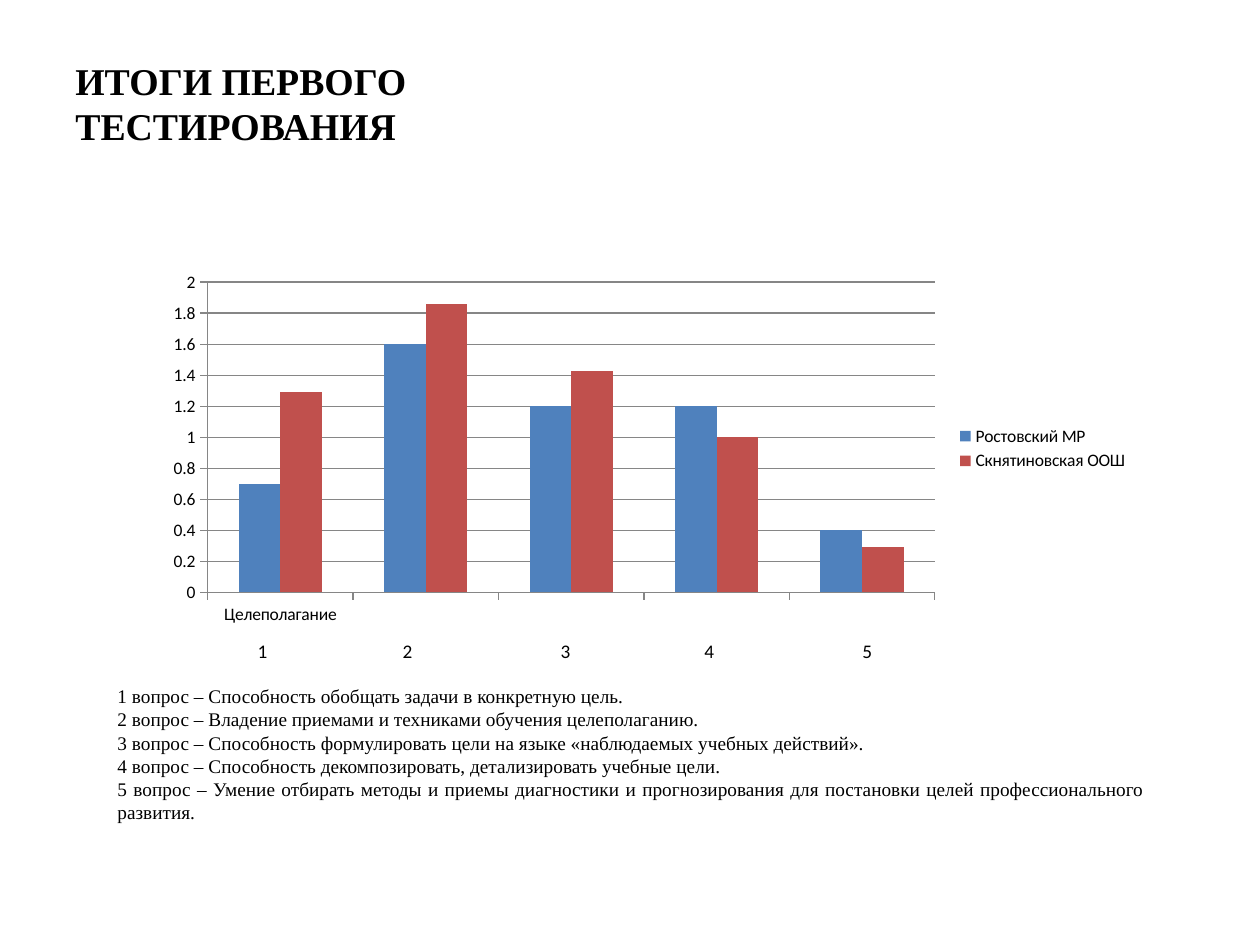
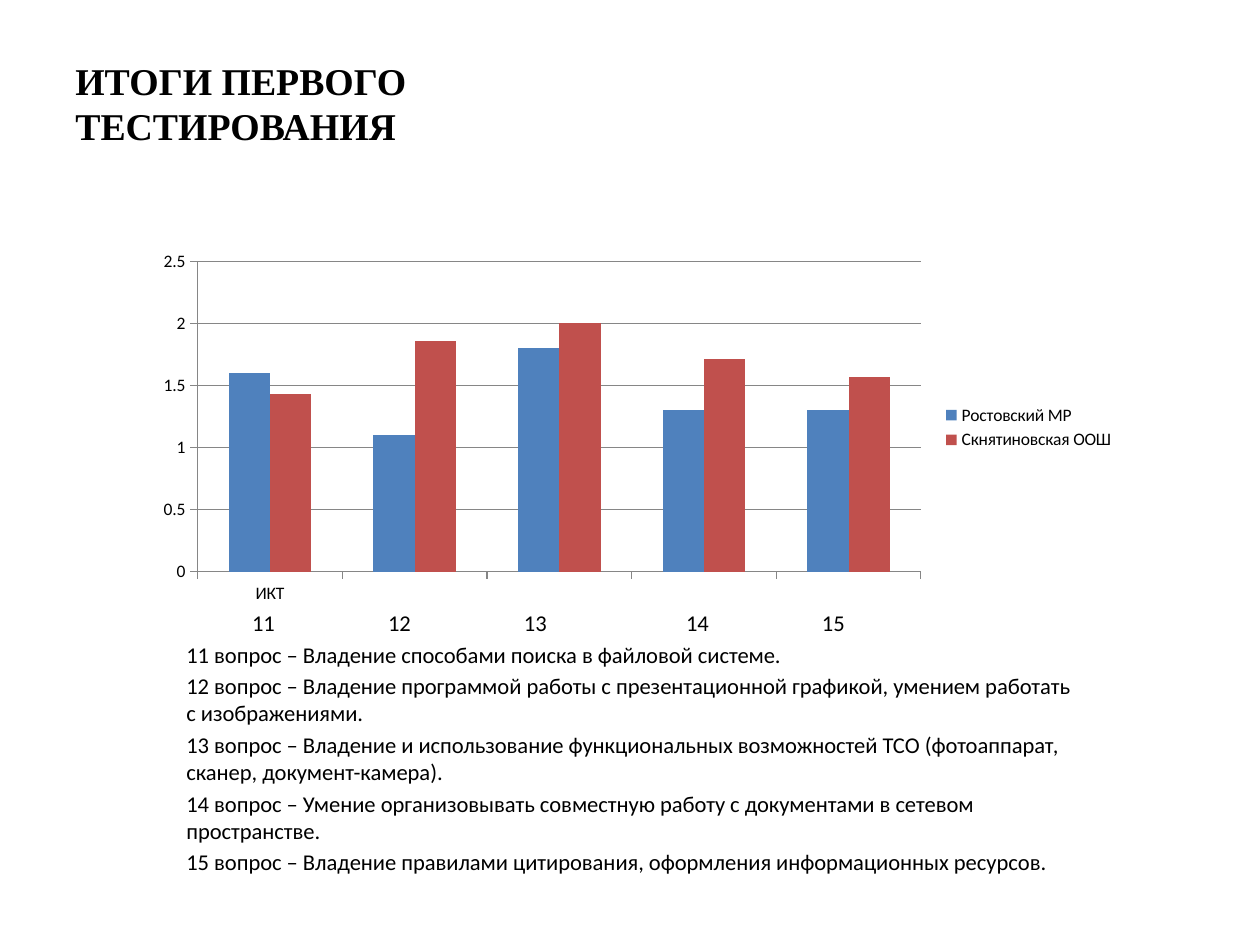
from lxml import etree
from pptx import Presentation
from pptx.chart.data import CategoryChartData
from pptx.dml.color import RGBColor
from pptx.enum.chart import XL_CHART_TYPE as ChartType, XL_LEGEND_POSITION as LegendPos
from pptx.enum.chart import XL_TICK_MARK as Tick
from pptx.enum.text import MSO_ANCHOR as Anchor, PP_ALIGN as Align
from pptx.oxml.ns import qn
from pptx.util import Pt

PX = 914400 // 126
BLACK = RGBColor(0x00, 0x00, 0x00)
GREY = RGBColor(0x86, 0x86, 0x86)
BLUE = RGBColor(0x4F, 0x81, 0xBD)
RED = RGBColor(0xC0, 0x50, 0x4D)
SERIF, SANS = "Times New Roman", "Calibri"
INSET = 13
TITLE = "ИТОГИ ПЕРВОГО ТЕСТИРОВАНИЯ"
SERIES = [("Ростовский МР", BLUE), ("Скнятиновская ООШ", RED)]

GOAL_QUESTIONS = [
    "1 вопрос – Способность обобщать задачи в конкретную цель.",
    "2 вопрос – Владение приемами и техниками обучения целеполаганию.",
    "3 вопрос – Способность формулировать цели на языке «наблюдаемых учебных действий».",
    "4 вопрос – Способность декомпозировать, детализировать учебные цели.",
    "5 вопрос – Умение отбирать методы и приемы диагностики и прогнозирования "
    "для постановки целей профессионального развития.",
]
ICT_QUESTIONS = [
    "11 вопрос – Владение способами поиска в файловой системе.",
    "12 вопрос – Владение программой работы с презентационной графикой, "
    "умением работать с изображениями.",
    "13 вопрос – Владение и использование функциональных возможностей ТСО "
    "(фотоаппарат, сканер, документ-камера).",
    "14 вопрос – Умение организовывать совместную работу с документами в сетевом пространстве.",
    "15 вопрос – Владение правилами цитирования, оформления информационных ресурсов.",
]


def to_emu(box):
    return [v * PX for v in box]


def style(font, size, name, bold=False):
    font.size, font.name, font.bold = Pt(size), name, bold
    font.color.rgb = BLACK


def add_text(s, box, lines, size, name, bold=False, align=Align.LEFT,
             anchor=Anchor.TOP, gap=0):
    tf = s.shapes.add_textbox(*to_emu(box)).text_frame
    tf.word_wrap = True
    tf.vertical_anchor = anchor
    for i, line in enumerate(lines):
        p = tf.paragraphs[0] if i == 0 else tf.add_paragraph()
        p.text = line
        p.alignment = align
        if i:
            p.space_before = Pt(gap)
        style(p.font, size, name, bold)
    return tf


def add_title(s):
    tf = add_text(s, (63, 38, 415, 160), [TITLE], 21.6, SERIF, True, anchor=Anchor.BOTTOM)
    tf.margin_bottom = 50 * PX


def add_numbered_text(s, box, numbers, centers, lines, size):
    """Text whose first line holds question numbers centred under the bar groups."""
    first = "".join(f"\t{n}" for n in numbers)
    tf = add_text(s, box, [first, *lines], size, SANS, gap=size / 5)
    tf.margin_top = 8 * PX
    pPr = tf.paragraphs[0]._p.get_or_add_pPr()
    tabs = etree.Element(qn("a:tabLst"))
    for x in centers:
        pos = (x - box[0] - INSET) * PX
        etree.SubElement(tabs, qn("a:tab"), pos=str(pos), algn="ctr")
    pPr.find(qn("a:defRPr")).addprevious(tabs)


def add_results_chart(s, box, topic, results, top, step):
    data = CategoryChartData()
    data.categories = [topic]
    for (name, _), values in zip(SERIES, results):
        data.add_series(name, values)
    chart = s.shapes.add_chart(ChartType.COLUMN_CLUSTERED, *to_emu(box), data).chart
    style(chart.font, 10, SANS)
    chart.has_title = False
    chart.has_legend = True
    chart.legend.position = LegendPos.RIGHT
    chart.legend.include_in_layout = False

    plot = chart.plots[0]
    plot.gap_width = 150
    plot.vary_by_categories = False
    for series, (_, color) in zip(plot.series, SERIES):
        series.format.fill.solid()
        series.format.fill.fore_color.rgb = color

    values_axis = chart.value_axis
    values_axis.minimum_scale, values_axis.maximum_scale = 0, top
    values_axis.major_unit = step
    values_axis.major_gridlines.format.line.color.rgb = GREY
    for axis in (chart.category_axis, values_axis):
        axis.major_tick_mark = Tick.OUTSIDE
        axis.format.line.color.rgb = GREY
        axis.tick_labels.number_format = "General"
        axis.tick_labels.number_format_is_linked = False


def add_slide(prs):
    s = prs.slides.add_slide(prs.slide_layouts[6])
    add_title(s)
    return s


def main():
    prs = Presentation()
    prs.slide_width, prs.slide_height = to_emu((1260, 945))

    s = add_slide(prs)
    add_numbered_text(s, (164, 631, 932, 218), range(1, 6), (263, 408, 566, 710, 868), [], 11)
    add_results_chart(s, (154, 265, 987, 367), "Целеполагание",
                      [(0.7, 1.6, 1.2, 1.2, 0.4), (1.29, 1.86, 1.43, 1, 0.29)], 2, 0.2)
    add_text(s, (105, 678, 1052, 152), GOAL_QUESTIONS, 11, SERIF,
             align=Align.JUSTIFY, anchor=Anchor.MIDDLE)

    s = add_slide(prs)
    add_numbered_text(s, (174, 601, 922, 248), range(11, 16), (264, 400, 536, 698, 834),
                      ICT_QUESTIONS, 12.9)
    add_results_chart(s, (144, 244, 983, 367), "ИКТ",
                      [(1.6, 1.1, 1.8, 1.3, 1.3), (1.43, 1.86, 2, 1.71, 1.57)], 2.5, 0.5)

    prs.save("out.pptx")


if __name__ == "__main__":
    main()
